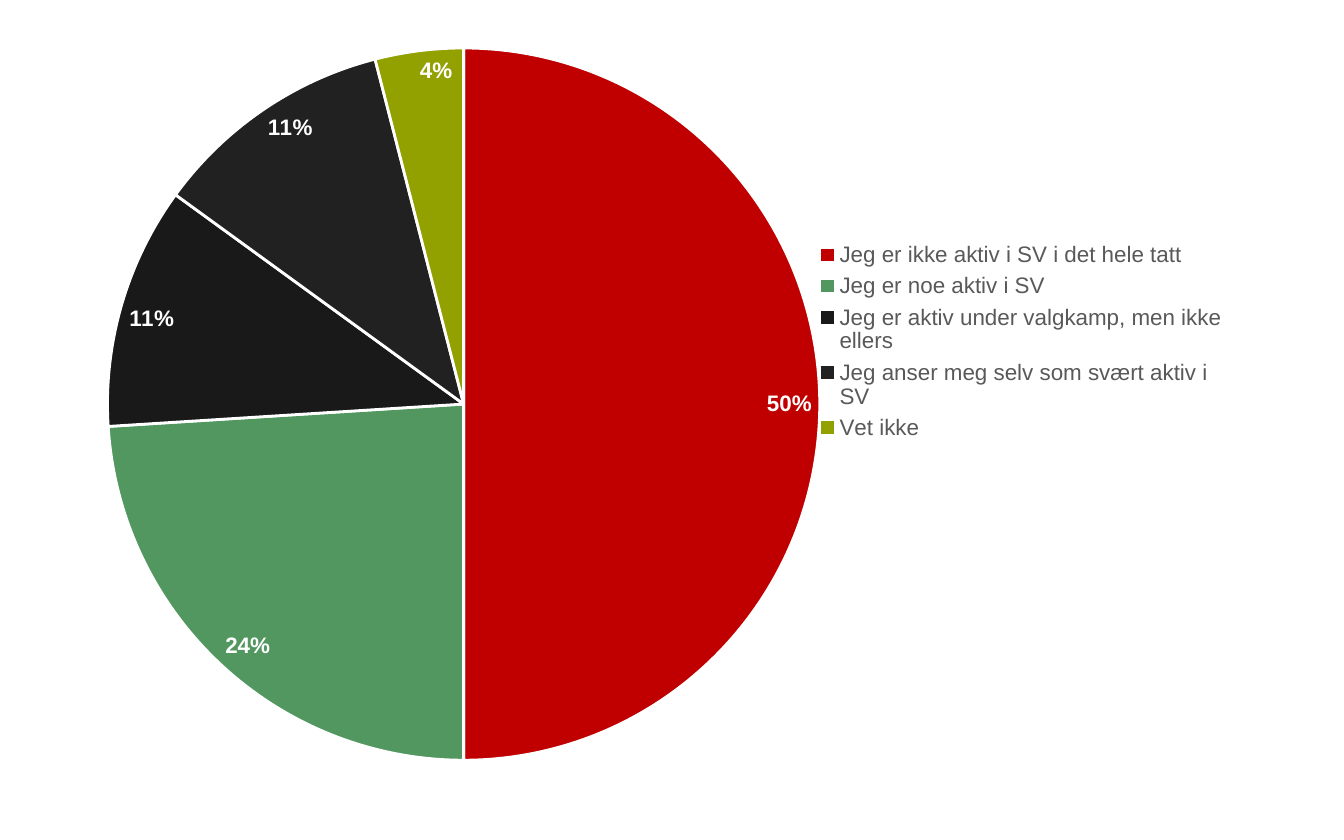
from typing import NamedTuple

from lxml import etree
from pptx import Presentation
from pptx import util as u
from pptx.chart.data import CategoryChartData
from pptx.dml.color import RGBColor
from pptx.enum import chart as kinds
from pptx.oxml.ns import qn

WIDTH, HEIGHT = u.Inches(10), u.Inches(6.25)
CHART_HEIGHT = u.Inches(5.84)
WHITE, GREY = "FFFFFF", "595959"


class Answer(NamedTuple):
    label: str
    share: float
    color: str


class Area(NamedTuple):
    """Left, top, width and height as shares of the chart."""
    x: float
    y: float
    w: float
    h: float


ANSWERS = [
    Answer("Jeg er ikke aktiv i SV i det hele tatt", 0.50, "C00000"),
    Answer("Jeg er noe aktiv i SV", 0.24, "539760"),
    Answer("Jeg er aktiv under valgkamp, men ikke ellers", 0.11, "191919"),
    Answer("Jeg anser meg selv som svært aktiv i SV", 0.11, "212121"),
    Answer("Vet ikke", 0.04, "92A000"),
]
PIE_AREA = Area(0.08, 0.06, 0.53, 0.91)
LEGEND_AREA = Area(0.61, 0.3, 0.3, 0.27)


def rgb(color: str) -> RGBColor:
    return RGBColor.from_string(color)


def style_font(font, size: float, color: str, bold: bool = False) -> None:
    font.name, font.size, font.bold = "Arial", u.Pt(size), bold
    font.color.rgb = rgb(color)


def place(element, area: Area, before: str, inner: bool = False) -> None:
    """Give a chart part a manual layout, in front of its named child."""
    for old in element.findall(qn("c:layout")):
        element.remove(old)
    layout = etree.Element(qn("c:layout"))
    manual = etree.SubElement(layout, qn("c:manualLayout"))
    settings = {"layoutTarget": "inner"} if inner else {}
    settings |= {"xMode": "edge", "yMode": "edge"}
    settings |= {name: str(value) for name, value in area._asdict().items()}
    for name, value in settings.items():
        etree.SubElement(manual, qn(f"c:{name}")).set("val", value)
    element.find(qn(before)).addprevious(layout)


def add_activity_pie(page) -> None:
    data = CategoryChartData(number_format="0%")
    data.categories = [answer.label for answer in ANSWERS]
    data.add_series("Series 1", [answer.share for answer in ANSWERS])
    chart = page.shapes.add_chart(
        kinds.XL_CHART_TYPE.PIE, 0, 0, WIDTH, CHART_HEIGHT, data).chart
    style_font(chart.font, 10, "000000")
    chart.has_title = False

    plot = chart.plots[0]
    plot.vary_by_categories = True
    for index, answer in enumerate(ANSWERS):
        piece = plot.series[0].points[index].format
        piece.fill.solid()
        piece.fill.fore_color.rgb = rgb(answer.color)
        piece.line.color.rgb = rgb(WHITE)
        piece.line.width = u.Pt(1.5)

    labels = plot.series[0].data_labels
    labels.show_value = True
    labels.show_percentage = False
    labels.number_format, labels.number_format_is_linked = "0%", False
    labels.position = kinds.XL_LABEL_POSITION.INSIDE_END
    style_font(labels.font, 12, WHITE, bold=True)

    chart.has_legend = True
    legend = chart.legend
    legend.position = kinds.XL_LEGEND_POSITION.RIGHT
    legend.include_in_layout = False
    style_font(legend.font, 12, GREY)

    root = chart.element.find(qn("c:chart"))
    place(root.find(qn("c:plotArea")), PIE_AREA, "c:pieChart", inner=True)
    place(root.find(qn("c:legend")), LEGEND_AREA, "c:overlay")


def main() -> None:
    deck = Presentation()
    deck.slide_width, deck.slide_height = WIDTH, HEIGHT
    page = deck.slides.add_slide(deck.slide_layouts[6])
    add_activity_pie(page)
    deck.save("out.pptx")


if __name__ == "__main__":
    main()
